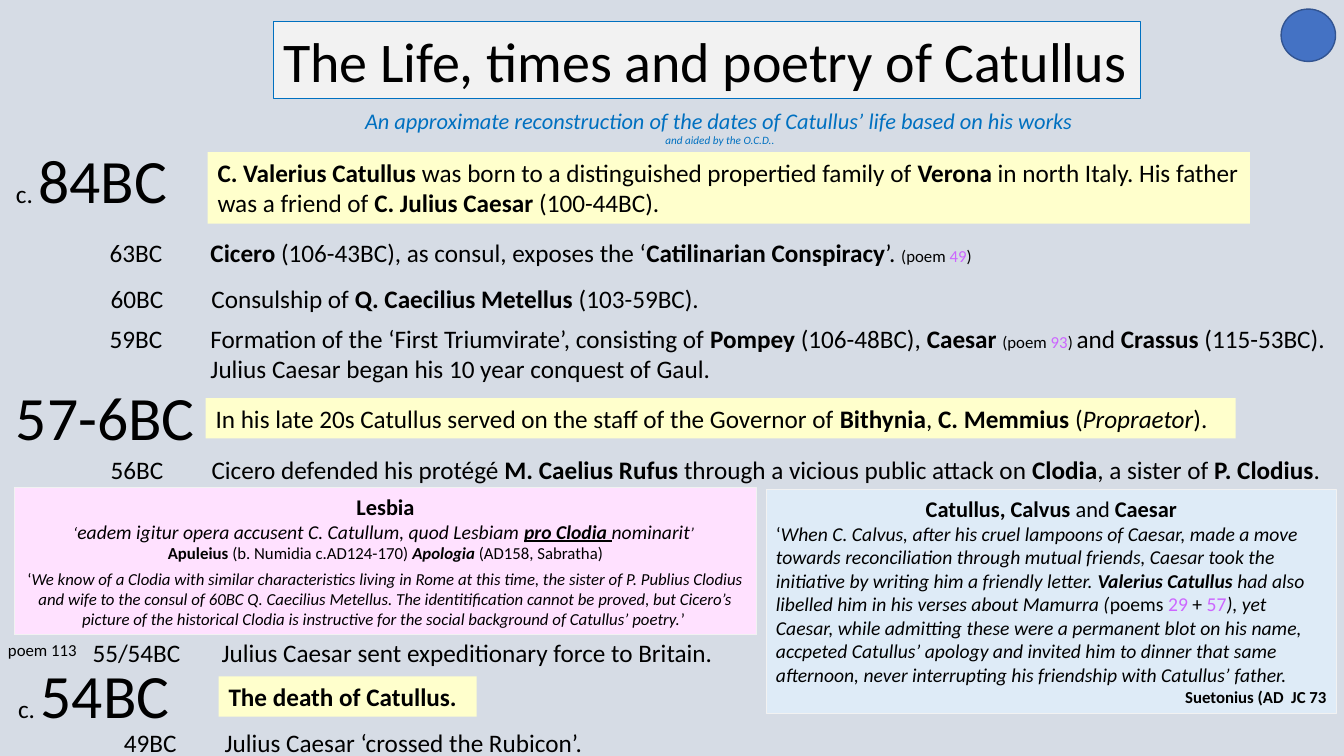
import pptx
import pptx.dml.color
import pptx.enum.shapes
import pptx.enum.text
import pptx.oxml
import pptx.oxml.ns
import pptx.util

Pt = pptx.util.Pt
RGBColor = pptx.dml.color.RGBColor
ALIGN = pptx.enum.text.PP_ALIGN
SHAPE = pptx.enum.shapes.MSO_SHAPE

BACKGROUND = RGBColor(0xD6, 0xDC, 0xE5)
BLACK = RGBColor(0, 0, 0)
BLUE = RGBColor(0x00, 0x70, 0xC0)
VIOLET = RGBColor(0xCC, 0x66, 0xFF)
PALE_GREY = RGBColor(0xF2, 0xF2, 0xF2)
YELLOW = RGBColor(0xFF, 0xFF, 0xCC)
PINK = RGBColor(0xFF, 0xE1, 0xFF)
PALE_BLUE = RGBColor(0xDE, 0xEB, 0xF7)
CIRCLE_FILL = RGBColor(0x44, 0x72, 0xC4)
CIRCLE_LINE = RGBColor(0x32, 0x54, 0x91)

FONT = "Calibri"
ROW_HEIGHT = 28.8


def add_run(paragraph, text, size=18, color=BLACK, bold=False, italic=False, underline=False):
    run = paragraph.add_run()
    run.text = text
    font = run.font
    font.name, font.size, font.color.rgb = FONT, Pt(size), color
    font.bold, font.italic, font.underline = bold, italic, underline


def bold(text, **text_format):
    return text, {"bold": True, **text_format}


def italic(text, **text_format):
    return text, {"italic": True, **text_format}


def poem(number, size=12):
    """A poem number in violet."""
    return number, {"size": size, "color": VIOLET}


def small(text, size=12):
    return text, {"size": size}


def fill_paragraph(paragraph, runs, align=ALIGN.LEFT, space_before=0):
    """Each run is plain text or a pair of text and format."""
    paragraph.alignment = align
    paragraph.space_before = Pt(space_before)
    for run in runs:
        text, text_format = (run, {}) if isinstance(run, str) else run
        add_run(paragraph, text, **text_format)


def fill_frame(frame, paragraphs):
    """Each paragraph is a list of runs, or a pair of runs and paragraph format."""
    frame.word_wrap = True
    frame.vertical_anchor = pptx.enum.text.MSO_ANCHOR.TOP
    for index, content in enumerate(paragraphs):
        runs, layout = content if isinstance(content, tuple) else (content, {})
        paragraph = frame.add_paragraph() if index else frame.paragraphs[0]
        fill_paragraph(paragraph, runs, **layout)


def add_text(slide, left, top, width, height, paragraphs):
    box = slide.shapes.add_textbox(Pt(left), Pt(top), Pt(width), Pt(height))
    fill_frame(box.text_frame, paragraphs)
    return box


def add_panel(slide, left, top, width, height, fill, paragraphs=(), line=None,
              line_width=0.75, kind=SHAPE.RECTANGLE):
    panel = slide.shapes.add_shape(kind, Pt(left), Pt(top), Pt(width), Pt(height))
    panel.shadow.inherit = False
    panel.fill.solid()
    panel.fill.fore_color.rgb = fill
    if line is None:
        panel.line.fill.background()
    else:
        panel.line.color.rgb = line
        panel.line.width = Pt(line_width)
    fill_frame(panel.text_frame, paragraphs)


def add_big_date(slide, left, top, date, prefix=""):
    runs = [prefix] if prefix else []
    add_text(slide, left, top, 151.2, 60.5, [runs + [small(date, 44)]])


def add_event(slide, left, top, width, date, lines, tab=72):
    """A date, then its event lines aligned on a tab stop."""
    paragraphs = [["\t"] + line for line in lines]
    paragraphs[0].insert(0, date)
    box = add_text(slide, left, top, width, ROW_HEIGHT, paragraphs)
    for paragraph in box.text_frame.paragraphs:
        properties = paragraph._p.get_or_add_pPr()
        properties.append(pptx.oxml.parse_xml(
            f'<a:tabLst {pptx.oxml.ns.nsdecls("a")}>'
            f'<a:tab pos="{int(Pt(tab))}" algn="l"/></a:tabLst>'))


def add_heading(slide):
    centre = {"align": ALIGN.CENTER}
    add_text(slide, 222.5, 72.7, 585.4, 36, [
        ([italic("An approximate reconstruction of the dates of Catullus’ life based on his works ",
                 size=16, color=BLUE)], centre),
        ([italic("and aided by the O.C.D.. ", size=8, color=BLUE)], centre)])
    add_panel(slide, 195.1, 15.1, 619.9, 55.4, PALE_GREY,
              [[small("The Life, times and poetry of Catullus", 40)]], line=BLUE)
    add_panel(slide, 915.1, 6.5, 38.9, 37.4, CIRCLE_FILL, line=CIRCLE_LINE,
              line_width=1, kind=SHAPE.OVAL)


def add_life(slide):
    add_big_date(slide, 4.3, 97.9, "84BC", "c. ")
    add_panel(slide, 148.3, 108.7, 744.5, 51.1, YELLOW, [[
        bold("C. Valerius Catullus "), "was born to a distinguished propertied family of ",
        bold("Verona"), " in north Italy. His father was a friend of ",
        bold("C. Julius Caesar "), "(100-44BC)."]])
    add_big_date(slide, 4.3, 267.1, "57-6BC")
    add_panel(slide, 146.9, 284.4, 735.8, ROW_HEIGHT, YELLOW, [[
        "In his late 20s Catullus served on the staff of the Governor of ",
        bold("Bithynia"), ", ", bold("C. Memmius "), "(", italic("Propraetor"), ")."]])
    add_big_date(slide, 5.8, 465.8, "54BC", "c. ")
    add_panel(slide, 156.2, 483.1, 184.3, ROW_HEIGHT, YELLOW, [[bold("The death of Catullus.")]])


def add_times(slide):
    add_event(slide, 71.3, 166.3, 753.8, "63BC", [[
        bold("Cicero "), "(106-43BC), as consul, exposes the ‘",
        bold("Catilinarian Conspiracy"), "’. ", small("(poem "), poem("49"), small(")")]])
    add_event(slide, 72, 198.7, 753.8, "60BC", [[
        "Consulship of ", bold("Q. Caecilius Metellus "), "(103-59BC)."]])
    add_event(slide, 71.3, 227.5, 883.4, "59BC", [
        ["Formation of the ‘First Triumvirate’, consisting of ", bold("Pompey "),
         "(106-48BC), ", bold("Caesar "), small("(poem "), poem("93"), small(") "), "and ",
         bold("Crassus "), "(115-53BC)."],
        ["Julius Caesar began his 10 year conquest of Gaul."]])
    add_event(slide, 72, 321.1, 884.2, "56BC", [[
        "Cicero defended his protégé ", bold("M. Caelius Rufus "),
        "through a vicious public attack on ", bold("Clodia"), ", a sister of ",
        bold("P. Clodius"), "."]])
    add_event(slide, 59, 451.4, 779, "55/54BC",
              [["Julius Caesar sent expeditionary force to Britain."]], tab=92.2)
    add_event(slide, 81.4, 516.2, 359.3, "49BC", [["Julius Caesar ‘crossed the Rubicon’."]])
    add_text(slide, -1.4, 453.6, 66.2, 21.6, [[small("poem 113")]])


def add_quotations(slide):
    centre = {"align": ALIGN.CENTER}
    # Lesbia
    add_panel(slide, 10.1, 348.5, 530.6, 105.1, PINK, [
        ([bold("Lesbia", size=16)], centre),
        ([italic("‘", size=12),
          italic("eadem igitur opera accusent C. Catullum, quod Lesbiam ", size=14),
          italic("pro Clodia ", size=14, bold=True, underline=True),
          italic("nominarit", size=14), italic("’ ", size=12)], centre),
        ([bold("Apuleius ", size=12), small("(b. Numidia c.AD124-170) "),
          bold("Apologia ", size=12, italic=True), small("(AD158, Sabratha)")], centre),
        ([small("‘"),
          italic("We know of a Clodia with similar characteristics living in Rome at this time, "
                 "the sister of P. Publius Clodius and wife to the consul of 60BC Q. Caecilius "
                 "Metellus. The identitification cannot be proved, but Cicero’s picture of the "
                 "historical Clodia is instructive for the social background of Catullus’ poetry.",
                 size=12),
          small("’ ")], {"align": ALIGN.CENTER, "space_before": 3.6})], line=PALE_GREY)
    # Catullus, Calvus and Caesar
    add_panel(slide, 547.2, 349.9, 407.5, 159.8, PALE_BLUE, [
        ([bold("Catullus, Calvus ", size=16), small("and", 16), bold(" Caesar", size=16)], centre),
        [small("‘", 14),
         italic("When C. Calvus, after his cruel lampoons of Caesar, made a move towards "
                "reconciliation through mutual friends, Caesar took the initiative by writing "
                "him a friendly letter. ", size=14),
         italic("Valerius Catullus ", size=14, bold=True),
         italic("had also libelled him in his verses about Mamurra (", size=14),
         small("poems ", 14), poem("29", 14), small(" + ", 14), poem("57", 14),
         italic("), yet Caesar, while admitting these were a permanent blot on his name, "
                "accpeted Catullus’ apology and invited him to dinner that same afternoon, "
                "never interrupting his friendship with Catullus’ father.", size=14)],
        ([bold("Suetonius (AD  JC 73", size=12)], {"align": ALIGN.RIGHT})], line=PALE_GREY)


def main():
    presentation = pptx.Presentation()
    presentation.slide_width, presentation.slide_height = Pt(960), Pt(540)
    slide = presentation.slides.add_slide(presentation.slide_layouts[6])
    slide.background.fill.solid()
    slide.background.fill.fore_color.rgb = BACKGROUND
    add_heading(slide)
    add_life(slide)
    add_times(slide)
    add_quotations(slide)
    presentation.save("out.pptx")


if __name__ == "__main__":
    main()
